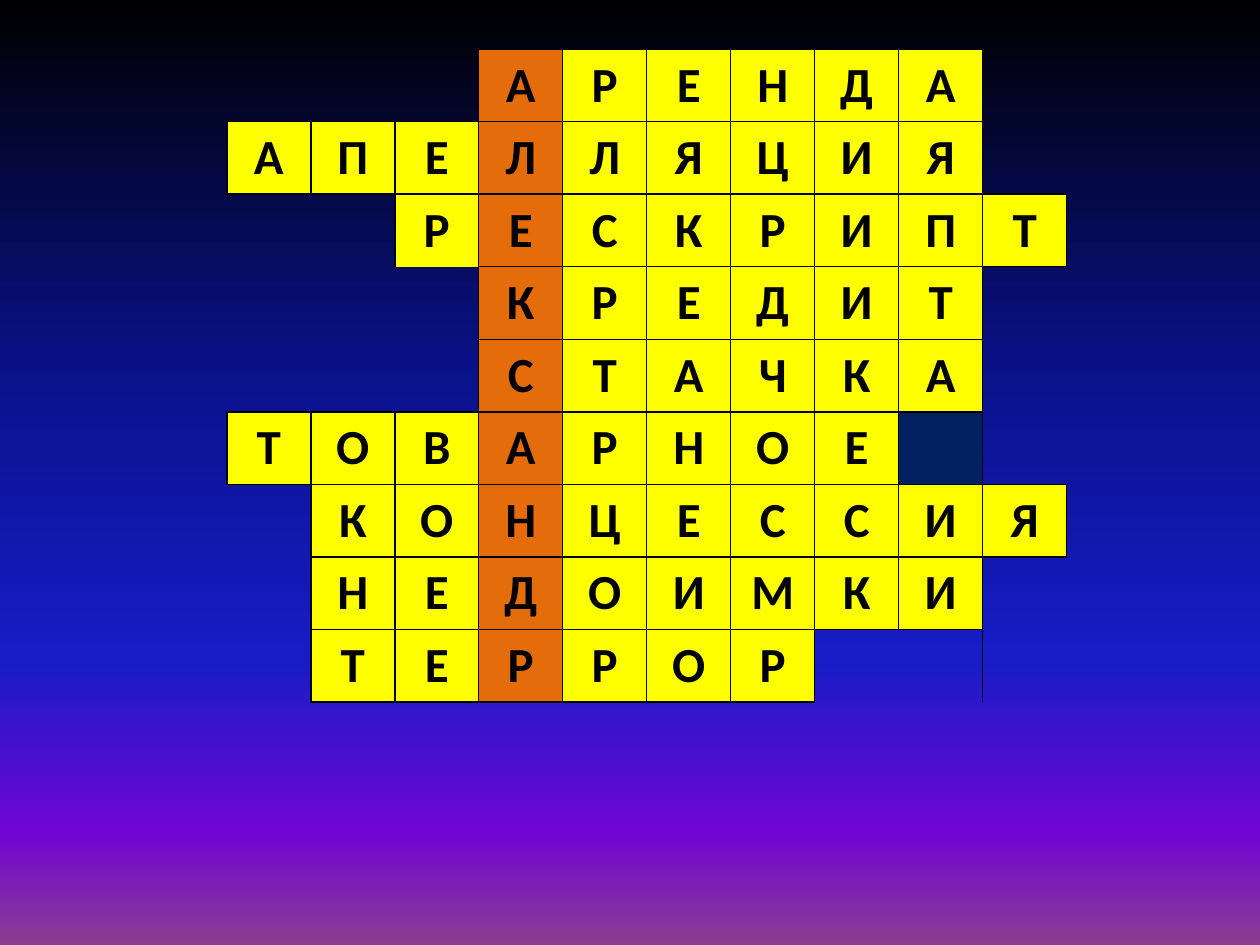
import pptx
import pptx.dml.color
import pptx.enum.text
import pptx.oxml
import pptx.oxml.ns
import pptx.util

RGB = pptx.dml.color.RGBColor
BLACK = RGB(0x00, 0x00, 0x00)
YELLOW = RGB(0xFF, 0xFF, 0x00)
ORANGE = RGB(0xE4, 0x6C, 0x0A)
NAVY = RGB(0x00, 0x20, 0x60)
SKY = [
    (0, BLACK),
    (40, RGB(0x0A, 0x12, 0x8C)),
    (70, RGB(0x18, 0x1C, 0xC7)),
    (88, RGB(0x70, 0x05, 0xD4)),
    (100, RGB(0x8C, 0x3D, 0x91)),
]
NAMESPACE = pptx.oxml.ns.nsdecls("a")
NO_STYLE = "{2D5ABB26-0587-4C30-8999-92F81FD0307C}"

WORDS = [
    (3, "АРЕНДА"),
    (0, "АПЕЛЛЯЦИЯ"),
    (2, "РЕСКРИПТ"),
    (3, "КРЕДИТ"),
    (3, "СТАЧКА"),
    (0, "ТОВАРНОЕ"),
    (1, "КОНЦЕССИЯ"),
    (1, "НЕДОИМКИ"),
    (1, "ТЕРРОР"),
]
KEY_COLUMN = 3
COLUMNS = 10
BLANKS = [
    (0, 0, 1, 3, "RB"),
    (0, 9, 2, 1, "LB"),
    (2, 0, 1, 2, "TR"),
    (3, 0, 2, 3, "RB"),
    (3, 9, 3, 1, "LTB"),
    (5, 8, 1, 1, "LTB"),
    (6, 0, 3, 1, "TR"),
    (7, 9, 2, 1, "LT"),
    (8, 7, 1, 2, "LT"),
]


def write_cell(cell, text, fill=None, edges="LRTB", size=28, color=BLACK):
    properties = cell._tc.get_or_add_tcPr()
    for side in "LRTB":
        paint = f'<a:solidFill><a:srgbClr val="{BLACK}"/></a:solidFill>' if side in edges else "<a:noFill/>"
        properties.append(pptx.oxml.parse_xml(f'<a:ln{side} {NAMESPACE} w="12700">{paint}</a:ln{side}>'))
    if fill is None:
        cell.fill.background()
    else:
        cell.fill.solid()
        cell.fill.fore_color.rgb = fill
    if text:
        para = cell.text_frame.paragraphs[0]
        para.alignment = pptx.enum.text.PP_ALIGN.CENTER
        span = para.add_run()
        span.text = text
        span.font.name = "Calibri"
        span.font.size = pptx.util.Pt(size)
        span.font.bold = True
        span.font.color.rgb = color


deck = pptx.Presentation()
deck.slide_width = pptx.util.Inches(10)
deck.slide_height = pptx.util.Inches(7.5)
page = deck.slides.add_slide(deck.slide_layouts[6])

background = page.background.fill
background.gradient()
background.gradient_angle = 270
stops = page._element.find(".//" + pptx.oxml.ns.qn("a:gsLst"))
for stop in list(stops):
    stops.remove(stop)
for percent, color in SKY:
    stops.append(pptx.oxml.parse_xml(
        f'<a:gs {NAMESPACE} pos="{percent * 1000}"><a:srgbClr val="{color}"/></a:gs>'))

column_width = deck.slide_width // 15
row_height = int(deck.slide_height * 0.68 / len(WORDS))
frame = page.shapes.add_table(
    len(WORDS), COLUMNS,
    int(deck.slide_width * 0.18), int(deck.slide_height * 0.39 / 7.5),
    column_width * COLUMNS, row_height * len(WORDS))
crossword = frame.table
crossword.first_row = False
crossword.horz_banding = False
crossword._tbl.tblPr.find(pptx.oxml.ns.qn("a:tableStyleId")).text = NO_STYLE
for column in crossword.columns:
    column.width = column_width
for row in crossword.rows:
    row.height = row_height

for row, (start, word) in enumerate(WORDS):
    for column, letter in enumerate(word, start):
        fill = ORANGE if column == KEY_COLUMN else YELLOW
        write_cell(crossword.cell(row, column), letter, fill=fill)

for row, column, height, width, edges in BLANKS:
    corner = crossword.cell(row, column)
    if height * width > 1:
        corner.merge(crossword.cell(row + height - 1, column + width - 1))
    write_cell(corner, "", fill=NAVY if height * width == 1 else None, edges=edges)

deck.save("out.pptx")
